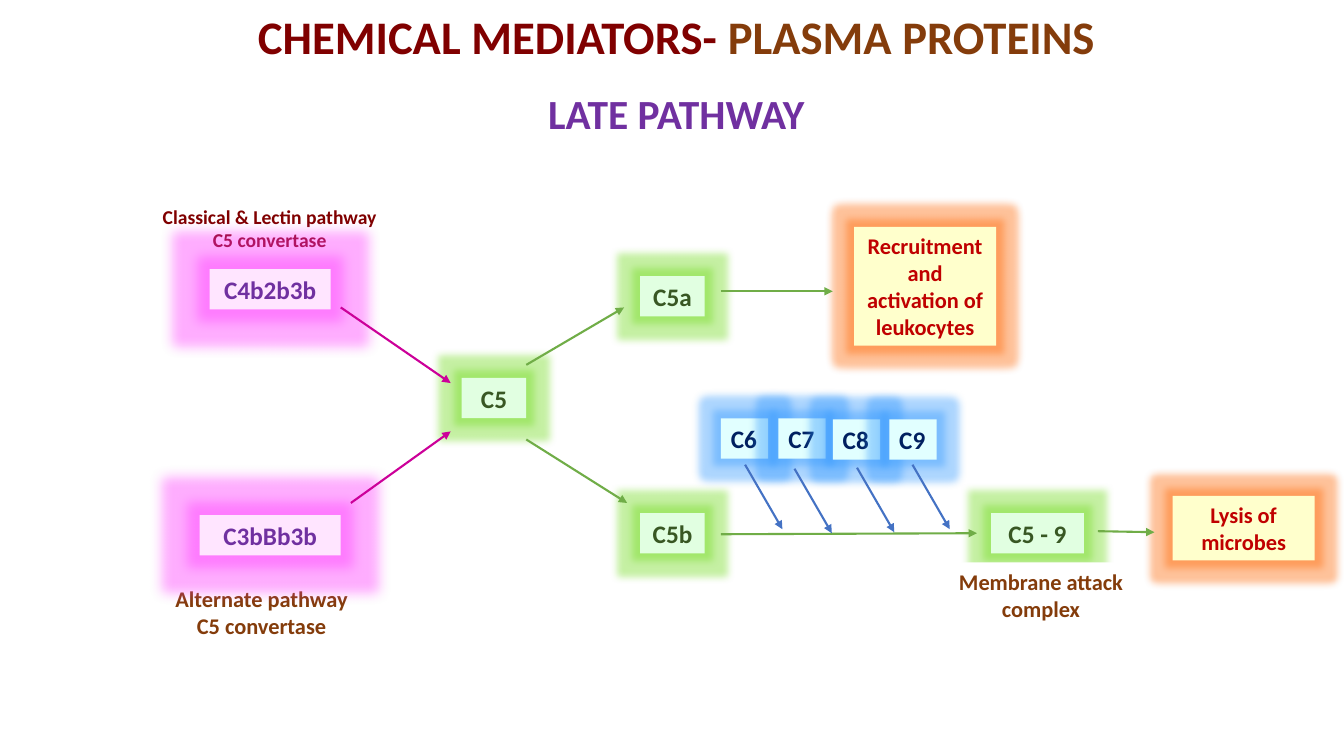
"""Build the slide on the late complement pathway."""
from lxml import etree
from pptx import Presentation
from pptx.dml.color import RGBColor
from pptx.enum.shapes import MSO_CONNECTOR, MSO_SHAPE
from pptx.enum.text import MSO_ANCHOR, PP_ALIGN
from pptx.oxml.ns import qn
from pptx.util import Inches, Pt

CENTER, LEFT = PP_ALIGN.CENTER, PP_ALIGN.LEFT
MIDDLE = MSO_ANCHOR.MIDDLE
RECTANGLE, STRAIGHT = MSO_SHAPE.RECTANGLE, MSO_CONNECTOR.STRAIGHT

MAROON = RGBColor(0x80, 0x00, 0x00)
BROWN = RGBColor(0x84, 0x3C, 0x0B)
PURPLE = RGBColor(0x70, 0x30, 0xA0)
DARK_GREEN = RGBColor(0x38, 0x57, 0x23)
NAVY = RGBColor(0x00, 0x20, 0x60)
RED = RGBColor(0xC0, 0x00, 0x00)
WHITE = RGBColor(0xFF, 0xFF, 0xFF)
PINK = RGBColor(0xFF, 0xE5, 0xFF)
MINT = RGBColor(0xE1, 0xFF, 0xE1)
AQUA = RGBColor(0xE1, 0xFF, 0xFF)
CREAM = RGBColor(0xFF, 0xFF, 0xCC)
GREEN = RGBColor(0x70, 0xAD, 0x47)
MAGENTA = RGBColor(0xCC, 0x00, 0x99)
BLUE = RGBColor(0x44, 0x72, 0xC4)
PINK_GLOW = RGBColor(0xFF, 0x33, 0xFF)
GREEN_GLOW = RGBColor(0x6F, 0xDB, 0x1A)
BLUE_GLOW = RGBColor(0x33, 0x99, 0xFF)
ORANGE_GLOW = RGBColor(0xFF, 0x66, 0x00)

CONVERTASE = (PINK, PURPLE, 18, CENTER, PINK_GLOW, 18)
FRAGMENT = (MINT, DARK_GREEN, 18, CENTER, GREEN_GLOW, 11)
COMPONENT = (AQUA, NAVY, 18, LEFT, BLUE_GLOW, 11)
OUTCOME = (CREAM, RED, 16, CENTER, ORANGE_GLOW, 11)
CAPTION = (WHITE, BROWN, 16, CENTER, None, 0)

boxes = [
    ("C4b2b3b", 2.08, 2.67, 1.2, 0.4, CONVERTASE),
    ("C3bBb3b", 1.98, 5.11, 1.4, 0.4, CONVERTASE),
    ("C5", 4.58, 3.75, 0.64, 0.4, FRAGMENT),
    ("C5a", 6.35, 2.74, 0.64, 0.4, FRAGMENT),
    ("C5b", 6.35, 5.09, 0.64, 0.4, FRAGMENT),
    ("C5 - 9", 9.83, 5.09, 0.92, 0.4, FRAGMENT),
    ("C6", 7.15, 4.15, 0.47, 0.4, COMPONENT),
    ("C7", 7.72, 4.15, 0.47, 0.4, COMPONENT),
    ("C8", 8.26, 4.16, 0.47, 0.4, COMPONENT),
    ("C9", 8.82, 4.16, 0.47, 0.4, COMPONENT),
    ("Membrane attack complex", 9.05, 5.58, 2.55, 0.64, CAPTION),
    ("Recruitment and activation of leukocytes", 8.47, 2.25, 1.41, 1.18, OUTCOME),
    ("Lysis of microbes", 11.63, 4.92, 1.41, 0.64, OUTCOME),
]
labels = [
    ("Classical & Lectin pathway\nC5 convertase", 1.47, 1.98, 2.41, 0.57, 14, MAROON),
    ("Alternate pathway C5 convertase", 1.58, 5.76, 2.03, 0.64, 16, BROWN),
]
arrows = [
    (7.15, 5.3, 9.69, 5.29, GREEN),
    (5.22, 4.36, 6.22, 4.99, GREEN),
    (5.22, 3.62, 6.19, 3.05, GREEN),
    (3.48, 4.99, 4.47, 4.28, MAGENTA),
    (3.38, 3.05, 4.47, 3.8, MAGENTA),
    (7.15, 2.89, 8.26, 2.89, GREEN),
    (10.89, 5.27, 11.45, 5.28, GREEN),
]
for x, y in [(7.39, 4.61), (7.88, 4.65), (8.5, 4.64), (9.05, 4.61)]:
    arrows.append((x, y, x + 0.37, y + 0.64, BLUE))


def format_span(span, size, color):
    span.font.name = "Calibri"
    span.font.size = Pt(size)
    span.font.bold = True
    span.font.color.rgb = color


def fill_text(shape, text, size, color, align):
    frame = shape.text_frame
    frame.text = text
    frame.word_wrap = True
    for para in frame.paragraphs:
        para.alignment = align
        format_span(para.runs[0], size, color)


deck = Presentation()
deck.slide_width, deck.slide_height = Inches(13.33), Inches(7.5)
page = deck.slides.add_slide(deck.slide_layouts[5])

title = page.shapes.title
title.left, title.top = Inches(0.96), Inches(0.11)
title.width, title.height = Inches(11.5), Inches(1.33)
title.text_frame.vertical_anchor = MIDDLE
title.text_frame.text = "CHEMICAL MEDIATORS- \nLATE PATHWAY"
heading, subheading = title.text_frame.paragraphs
heading.add_run().text = "PLASMA PROTEINS"
format_span(heading.runs[0], 33.3, MAROON)
format_span(heading.runs[1], 33.3, BROWN)
format_span(subheading.runs[0], 29.6, PURPLE)
for para in (heading, subheading):
    para.alignment = CENTER
    para.line_spacing = 0.8
    para.space_before = para.space_after = Pt(12)

for text, left, top, width, height, size, color in labels:
    label = page.shapes.add_textbox(Inches(left), Inches(top), Inches(width), Inches(height))
    fill_text(label, text, size, color, CENTER)

for text, left, top, width, height, style in boxes:
    fill, color, size, align, glow_color, radius = style
    box = page.shapes.add_shape(
        RECTANGLE, Inches(left), Inches(top), Inches(width), Inches(height))
    box.shadow.inherit = False
    box.fill.solid()
    box.fill.fore_color.rgb = fill
    box.line.fill.background()
    fill_text(box, text, size, color, align)
    box.text_frame.word_wrap = " " in text
    if glow_color is not None:
        effects = box._element.spPr.find(qn("a:effectLst"))
        glow = etree.SubElement(effects, qn("a:glow"), rad=str(Pt(radius)))
        tint = etree.SubElement(glow, qn("a:srgbClr"), val=str(glow_color))
        etree.SubElement(tint, qn("a:alpha"), val="40000")

for start_x, start_y, end_x, end_y, color in arrows:
    arrow = page.shapes.add_connector(
        STRAIGHT, Inches(start_x), Inches(start_y), Inches(end_x), Inches(end_y))
    arrow.line.color.rgb = color
    arrow.line.width = Pt(1.5)
    etree.SubElement(arrow.line._get_or_add_ln(), qn("a:tailEnd"), type="triangle")
    etree.SubElement(arrow._element.spPr, qn("a:effectLst"))

deck.save("out.pptx")
